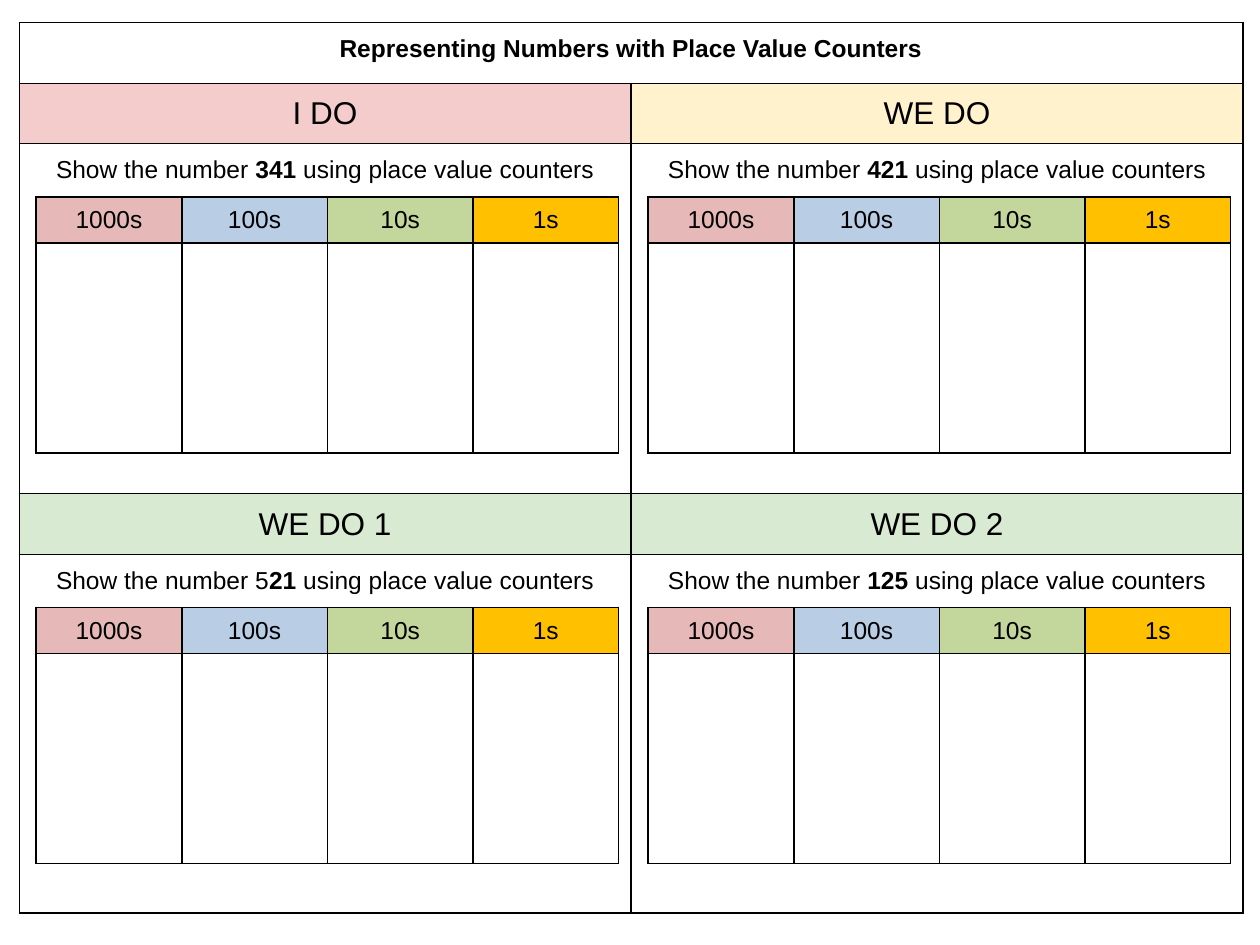
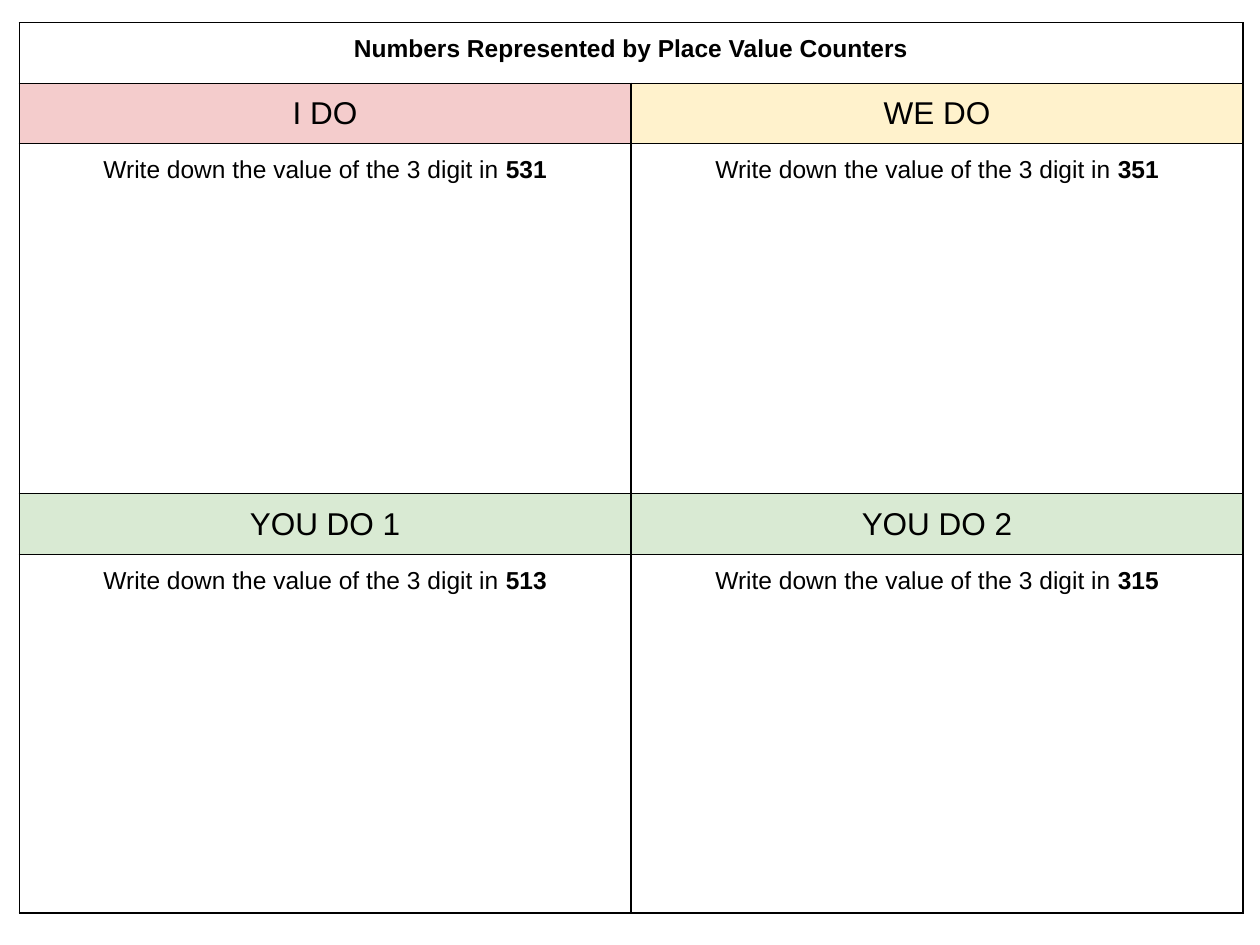
from lxml import etree
from pptx import Presentation
from pptx.dml.color import RGBColor
from pptx.enum.text import MSO_ANCHOR, PP_ALIGN
from pptx.oxml.ns import qn
from pptx.util import Pt

MIDDLE, TOP, CENTER = MSO_ANCHOR.MIDDLE, MSO_ANCHOR.TOP, PP_ALIGN.CENTER
BLANK = 6

LEFT, HEAD = 10.9, 13.1
HALF = 349.7
ROWS = [34.5, 34.5, 200, 34.5, 205]
BANDS = ["F4CCCC", "FFF2CC", "D9EAD3", "D9EAD3"]
PLACES = [("1000s", "E6B9B8"), ("100s", "B9CDE5"), ("10s", "C3D69B"), ("1s", "FFC000")]

SHOW, USING = "Show the number ", " using place value counters"
ASK = "Write down the value of the 3 digit in "
# Each task is its heading, the words before the bold digits, the digits, the words after.
SHEETS = [
    dict(title="Representing Numbers with Place Value Counters", charts=True, tasks=[
        ("I DO", SHOW, "341", USING),
        ("WE DO", SHOW, "421", USING),
        ("WE DO 1", SHOW + "5", "21", USING),
        ("WE DO 2", SHOW, "125", USING)]),
    dict(title="Numbers Represented by Place Value Counters", charts=False, tasks=[
        ("I DO", ASK, "531", ""),
        ("WE DO", ASK, "351", ""),
        ("YOU DO 1", ASK, "513", ""),
        ("YOU DO 2", ASK, "315", "")]),
]


def add_grid(slide, left, top, widths, heights, line):
    """Add an unstyled table with black lines around every cell."""
    table = slide.shapes.add_table(len(heights), len(widths), Pt(left), Pt(top),
                                   Pt(sum(widths)), Pt(sum(heights))).table
    table.first_row = table.horz_banding = False
    for col, width in zip(table.columns, widths):
        col.width = Pt(width)
    for row, height in zip(table.rows, heights):
        row.height = Pt(height)
    for cell in table.iter_cells():
        props = cell._tc.get_or_add_tcPr()
        for side in ("a:lnL", "a:lnR", "a:lnT", "a:lnB"):
            edge = etree.SubElement(props, qn(side), w=str(Pt(line)))
            fill = etree.SubElement(edge, qn("a:solidFill"))
            etree.SubElement(fill, qn("a:srgbClr"), val="000000")
        cell.fill.background()
    return table


def fill_cell(cell, runs, size=14, color=None, anchor=MIDDLE, inset=7.2):
    """Write (text, bold) runs centred in a cell, over an optional hex colour."""
    cell.vertical_anchor = anchor
    cell.margin_left = cell.margin_right = Pt(7.2)
    cell.margin_top = cell.margin_bottom = Pt(inset)
    if color:
        cell.fill.solid()
        cell.fill.fore_color.rgb = RGBColor.from_string(color)
    para = cell.text_frame.paragraphs[0]
    para.alignment = CENTER
    for text, bold in runs:
        run = para.add_run()
        run.text = text
        for name, value in dict(name="Arial", size=Pt(size), bold=bold).items():
            setattr(run.font, name, value)
        run.font.color.rgb = RGBColor.from_string("000000")


deck = Presentation()
deck.slide_width, deck.slide_height = Pt(720), Pt(540)

for sheet in SHEETS:
    slide = deck.slides.add_slide(deck.slide_layouts[BLANK])
    frame = add_grid(slide, LEFT, HEAD, [HALF] * 2, ROWS, 0.75)
    frame.cell(0, 0).merge(frame.cell(0, 1))
    fill_cell(frame.cell(0, 0), [(sheet["title"], True)], anchor=TOP)

    for i, (name, before, digits, after) in enumerate(sheet["tasks"]):
        row, col = 1 + i // 2 * 2, i % 2
        fill_cell(frame.cell(row, col), [(name, False)], 18, BANDS[i])
        runs = [(before, False), (digits, True), (after, False)]
        fill_cell(frame.cell(row + 1, col), [run for run in runs if run[0]], anchor=TOP)

        if sheet["charts"]:
            top = HEAD + sum(ROWS[:row + 1]) + 30.5
            chart = add_grid(slide, LEFT + 9.8 + col * HALF, top, [83.2] * 4, [26.4, 120], 1)
            for j, (place, color) in enumerate(PLACES):
                fill_cell(chart.cell(0, j), [(place, False)], color=color, inset=3.6)

deck.save("out.pptx")
